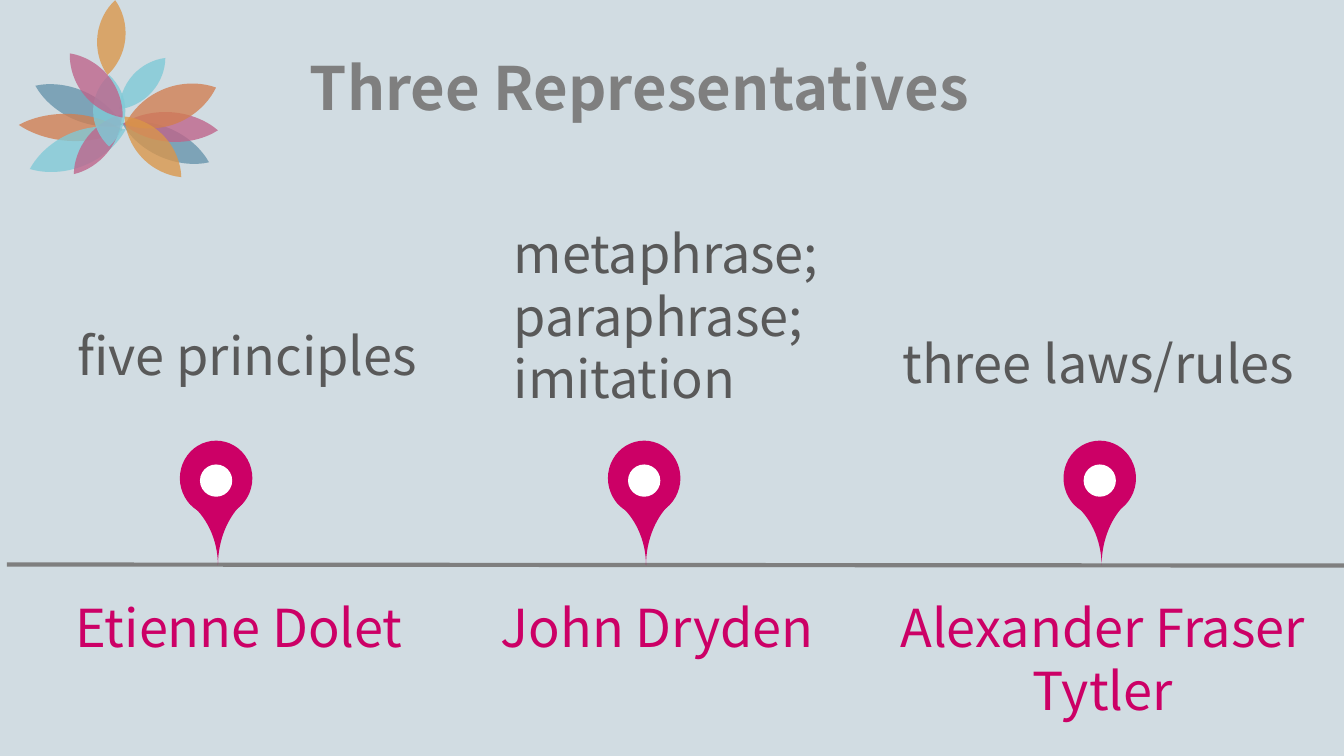
from lxml.etree import SubElement
from pptx import Presentation
from pptx.dml.color import RGBColor
from pptx.enum.shapes import MSO_CONNECTOR as Connector
from pptx.enum.shapes import MSO_SHAPE as Shape
from pptx.enum.text import MSO_AUTO_SIZE as AutoSize
from pptx.enum.text import PP_ALIGN as Align
from pptx.oxml.ns import qn
from pptx.util import Cm, Pt

BACKGROUND = RGBColor(0xD1, 0xDC, 0xE2)
GRAY = RGBColor(0x7F, 0x7F, 0x7F)
DARK = RGBColor(0x59, 0x59, 0x59)
MAGENTA = RGBColor(0xCC, 0x00, 0x66)
WHITE = RGBColor(0xFF, 0xFF, 0xFF)
BLUE = RGBColor(0x66, 0x94, 0xAB)
ORANGE = RGBColor(0xD2, 0x7E, 0x50)
ROSE = RGBColor(0xBF, 0x63, 0x8A)
AQUA = RGBColor(0x80, 0xCA, 0xD7)
AMBER = RGBColor(0xDB, 0x96, 0x49)

PETALS = [
    (1.21, 1.09, 0.56, 1.8, 294.2, BLUE, 78),
    (2.85, 1.8, 0.56, 1.8, 294.2, BLUE, 78),
    (1.08, 1.43, 0.51, 1.96, 92.8, ORANGE, 78),
    (2.94, 1.5, 0.56, 1.8, 274, ROSE, 78),
    (1.14, 1.84, 0.66, 1.96, 247.6, AQUA, 78),
    (2.88, 1.08, 0.69, 1.85, 67.9, ORANGE, 78),
    (1.61, 2, 0.48, 1.45, 218.8, ROSE, 78),
    (2.45, 0.93, 0.48, 1.3, 221.9, AQUA, 81),
    (1.84, 0, 0.53, 1.42, 5.9, AMBER, 78),
    (1.76, 1.42, 0.61, 1.35, 0, AQUA, 81),
    (1.53, 0.83, 0.58, 1.57, 320.5, ROSE, 78),
    (2.6, 1.99, 0.58, 1.57, 136.9, AMBER, 78),
]
PIN_LEFTS = [3.4, 11.49, 20.1]
NAMES = [
    ("Alexander Fraser Tytler", 16.6, 8.48, 2.64),
    ("Etienne Dolet", 1.14, 6.76, 1.45),
    ("John Dryden", 9.04, 6.76, 1.45),
]
IDEAS = [
    ("metaphrase; paraphrase; imitation", 9.58, 4.05, 6.99, 3.86),
    ("three laws/rules", 16.93, 6.14, 7.82, 1.45),
    ("five principles", 1.34, 5.98, 7.19, 1.45),
]


class Builder:
    font = "Noto Sans CJK SC"
    inset = Cm(0.13)

    def __init__(self, slide):
        self.slide = slide
        slide.background.fill.solid()
        slide.background.fill.fore_color.rgb = BACKGROUND

    def paint(self, shape, color, opacity=100):
        shape.shadow.inherit = False
        shape.fill.solid()
        shape.fill.fore_color.rgb = color
        shape.line.fill.background()
        if opacity < 100:
            color_element = shape._element.spPr.find(".//" + qn("a:srgbClr"))
            SubElement(color_element, qn("a:alpha")).set("val", str(opacity * 1000))

    def outline(self, shapes, start, segments, color, opacity=100):
        points = [(Cm(x), Cm(y)) for segment in segments for x, y in segment]
        builder = shapes.build_freeform(Cm(start[0]), Cm(start[1]))
        builder.add_line_segments(points, close=True)
        shape = builder.convert_to_shape()
        lines = iter(shape._element.spPr.findall(".//" + qn("a:lnTo")))
        for segment in segments:
            first = next(lines)
            if len(segment) == 3:
                first.tag = qn("a:cubicBezTo")
                for _ in range(2):
                    extra = next(lines)
                    first.append(extra[0])
                    extra.getparent().remove(extra)
        self.paint(shape, color, opacity)
        return shape

    def ellipse(self, shapes, left, top, width, height, color):
        shape = shapes.add_shape(Shape.OVAL, Cm(left), Cm(top), Cm(width), Cm(height))
        self.paint(shape, color)

    def petal(self, shapes, left, top, width, height, rotation, color, opacity):
        def at(x, y):
            return left + x * width, top + y * height

        tip = at(0.5, 0)
        segments = [
            (at(0.79, 0.12), at(1, 0.3), at(1, 0.5)),
            (at(1, 0.7), at(0.79, 0.88), at(0.5, 1)),
            (at(0.21, 0.88), at(0, 0.7), at(0, 0.5)),
            (at(0, 0.3), at(0.21, 0.12), tip),
        ]
        shape = self.outline(shapes, tip, segments, color, opacity)
        shape.rotation = rotation

    def flower(self):
        shapes = self.slide.shapes.add_group_shape().shapes
        for petal in PETALS:
            self.petal(shapes, *petal)

    def pin(self, left):
        shapes = self.slide.shapes.add_group_shape().shapes
        self.ellipse(shapes, left, 8.33, 1.37, 1.42, MAGENTA)
        x, y = left + 0.16, 9.5
        tip = (x + 0.56, y + 1.19)
        segments = [
            ((x + 1.04, y),),
            ((x + 0.76, y + 0.25), (x + 0.56, y + 0.69), tip),
            ((x + 0.56, y + 0.69), (x + 0.33, y + 0.23), (x, y)),
        ]
        self.outline(shapes, (x, y), segments, MAGENTA)
        self.ellipse(shapes, left + 0.38, 8.78, 0.61, 0.61, WHITE)

    def line(self, x1, y1, x2, y2):
        connector = self.slide.shapes.add_connector(
            Connector.STRAIGHT, Cm(x1), Cm(y1), Cm(x2), Cm(y2))
        connector.line.color.rgb = GRAY
        connector.line.width = Pt(2.25)
        SubElement(connector._element.spPr, qn("a:effectLst"))

    def text(self, words, left, top, width, height, color,
             size=28, align=Align.LEFT, bold=False):
        box = self.slide.shapes.add_textbox(Cm(left), Cm(top), Cm(width), Cm(height))
        frame = box.text_frame
        frame.word_wrap = True
        frame.auto_size = AutoSize.SHAPE_TO_FIT_TEXT
        frame.margin_left = frame.margin_right = self.inset
        frame.margin_top = frame.margin_bottom = self.inset
        paragraph = frame.paragraphs[0]
        paragraph.alignment = align
        run = paragraph.add_run()
        run.text = words
        run.font.name = self.font
        run.font.size = Pt(size)
        run.font.bold = bold
        run.font.color.rgb = color


def main():
    presentation = Presentation()
    presentation.slide_width = Cm(25.4)
    presentation.slide_height = Cm(14.29)
    slide = presentation.slides.add_slide(presentation.slide_layouts[6])
    builder = Builder(slide)
    builder.flower()
    builder.text("Three Representatives", 5.23, 0.84, 13.72, 1.6, GRAY,
                 size=32, align=Align.CENTER, bold=True)
    builder.line(0.13, 10.67, 25.4, 10.69)
    for left in PIN_LEFTS:
        builder.pin(left)
    for name, left, width, height in NAMES:
        builder.text(name, left, 11.13, width, height, MAGENTA, align=Align.CENTER)
    for idea, left, top, width, height in IDEAS:
        builder.text(idea, left, top, width, height, DARK)
    presentation.save("out.pptx")


if __name__ == "__main__":
    main()
